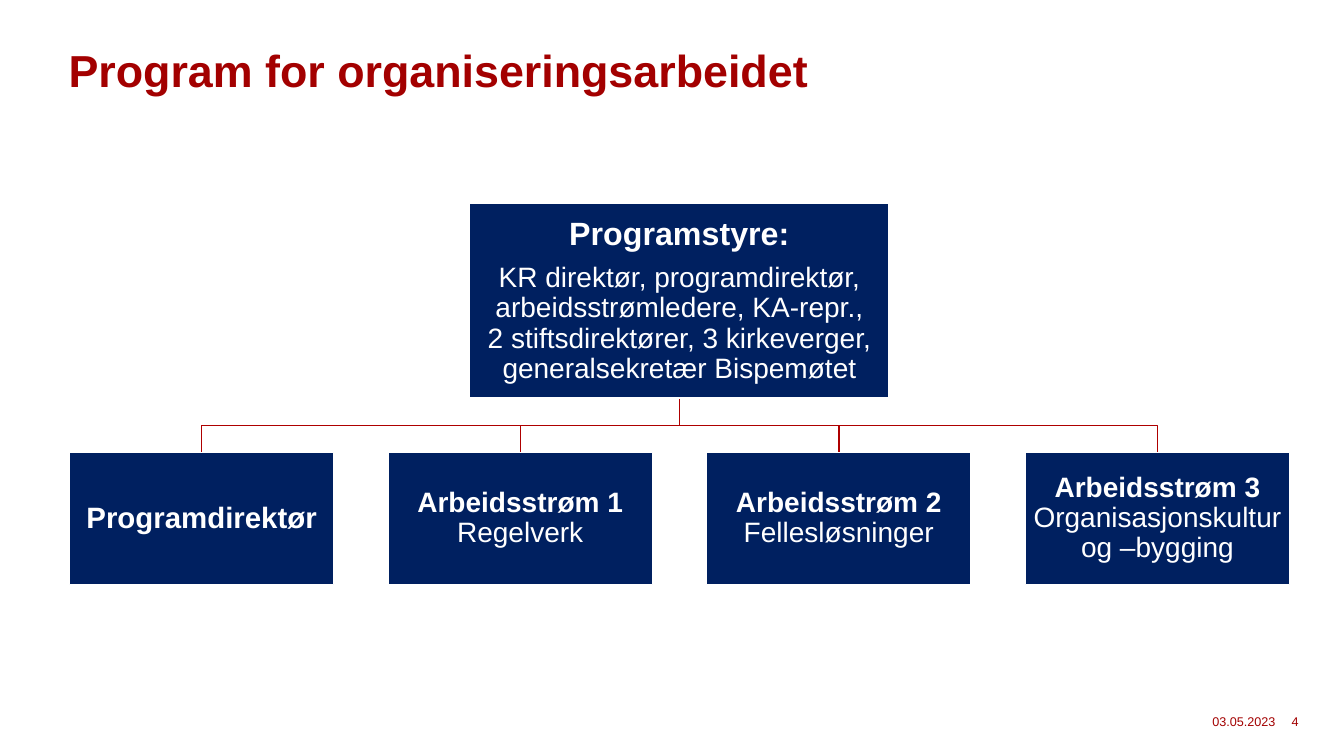
from dataclasses import dataclass

from pptx import Presentation
from pptx import util as u
from pptx.dml import color
from pptx.enum import shapes, text


@dataclass(frozen=True)
class Theme:
    font: str = "Arial"
    red: str = "A30000"
    rule: str = "AE0000"
    navy: str = "002060"
    white: str = "FFFFFF"
    title: float = 32
    head: float = 23
    lead: float = 21
    body: float = 20
    foot: float = 9


@dataclass(frozen=True)
class Run:
    text: str
    size: float
    bold: bool = False


@dataclass(frozen=True)
class Box:
    left: float
    top: float
    width: float
    height: float
    paras: list[list[Run]]
    inset: float = 0


T = Theme()
ALIGN = text.PP_ALIGN

# Chart layout: four equal boxes under the centred board
LEFT, STEP, COUNT = 0.69, 3.16, 4
WIDTH, HEIGHT = 2.62, 1.31
TOP, BUS, BASE = 4.49, 4.22, 3.94
MID = LEFT + WIDTH / 2 + STEP * (COUNT - 1) / 2

BOARD = Box(MID - 2.08, 2.02, 4.16, 1.93, [
    [Run("Programstyre:", T.head, True)],
    [Run("KR direktør, programdirektør, arbeidsstrømledere, KA-repr.,\v"
         "2 stiftsdirektører, 3 kirkeverger, generalsekretær Bispemøtet", T.body)],
], 0.02)

UNITS = [
    [Run("Programdirektør", T.lead, True)],
    [Run("Arbeidsstrøm 1 ", T.body, True), Run("Regelverk", T.body)],
    [Run("Arbeidsstrøm 2 ", T.body, True), Run("Fellesløsninger", T.body)],
    [Run("Arbeidsstrøm 3 ", T.body, True), Run("Organisasjonskultur og –bygging", T.body)],
]


def rgb(code: str) -> color.RGBColor:
    return color.RGBColor.from_string(code)


def write(shape, box: Box, ink: str, align, line: float = 0.9) -> None:
    """Fill a shape's text frame run by run."""
    frame = shape.text_frame
    frame.word_wrap = True
    frame.vertical_anchor = text.MSO_ANCHOR.MIDDLE
    frame.margin_left = frame.margin_right = u.Inches(box.inset)
    frame.margin_top = frame.margin_bottom = u.Inches(box.inset)
    for i, runs in enumerate(box.paras):
        para = frame.add_paragraph() if i else frame.paragraphs[0]
        para.alignment = align
        para.line_spacing = line
        if i < len(box.paras) - 1:
            para.space_after = u.Pt(8)
        for item in runs:
            for j, part in enumerate(item.text.split("\v")):
                if j:
                    para.add_line_break()
                run = para.add_run()
                run.text = part
                run.font.name = T.font
                run.font.size = u.Pt(item.size)
                run.font.bold = item.bold
                run.font.color.rgb = rgb(ink)


def place(box: Box) -> list[u.Length]:
    return [u.Inches(n) for n in (box.left, box.top, box.width, box.height)]


def label(slide, box: Box, align=ALIGN.LEFT, line: float = 1.0) -> None:
    write(slide.shapes.add_textbox(*place(box)), box, T.red, align, line)


def block(slide, box: Box) -> None:
    shape = slide.shapes.add_shape(shapes.MSO_SHAPE.RECTANGLE, *place(box))
    shape.shadow.inherit = False
    shape.fill.solid()
    shape.fill.fore_color.rgb = rgb(T.navy)
    shape.line.color.rgb = rgb(T.white)
    shape.line.width = u.Pt(1)
    write(shape, box, T.white, ALIGN.CENTER)


def branch(slide, end: float) -> None:
    """Draw the stepped line from the board down to one unit."""
    spots = [(MID, BASE), (MID, BUS), (end, BUS), (end, TOP)]
    first, *rest = [(u.Inches(x), u.Inches(y)) for x, y in spots]
    build = slide.shapes.build_freeform(*first)
    build.add_line_segments(rest, close=False)
    shape = build.convert_to_shape()
    shape.shadow.inherit = False
    shape.fill.background()
    shape.line.color.rgb = rgb(T.rule)
    shape.line.width = u.Pt(1)


def main() -> None:
    deck = Presentation()
    deck.slide_width, deck.slide_height = u.Inches(13.33), u.Inches(7.5)
    slide = deck.slides.add_slide(deck.slide_layouts[6])

    # Title and footer
    label(slide, Box(0.68, 0.25, 11.97, 0.94,
                     [[Run("Program for organiseringsarbeidet", T.title, True)]]), line=0.9)
    label(slide, Box(11.47, 7.04, 1.18, 0.23, [[Run("03.05.2023", T.foot)]]), ALIGN.RIGHT)
    label(slide, Box(12.81, 7.04, 0.38, 0.23, [[Run("4", T.foot)]]))

    # Branches behind the boxes
    lefts = [LEFT + STEP * i for i in range(COUNT)]
    for left in lefts:
        branch(slide, left + WIDTH / 2)

    # Board and units
    block(slide, BOARD)
    for left, runs in zip(lefts, UNITS):
        block(slide, Box(left, TOP, WIDTH, HEIGHT, [runs], 0.01))

    deck.save("out.pptx")


if __name__ == "__main__":
    main()
